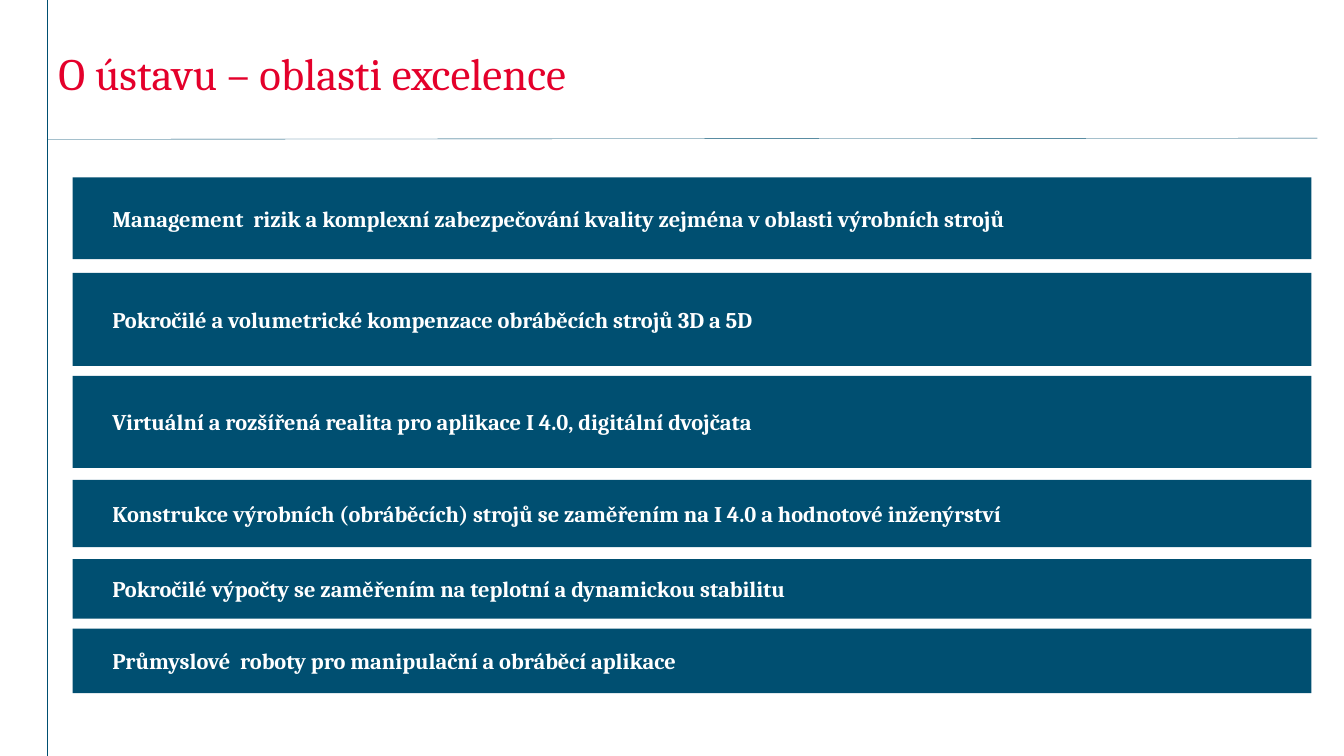
from dataclasses import dataclass

from lxml import etree
from pptx import Presentation
from pptx.dml.color import RGBColor
from pptx.enum.shapes import MSO_CONNECTOR, MSO_SHAPE
from pptx.enum.text import MSO_ANCHOR, PP_ALIGN
from pptx.oxml.ns import qn
from pptx.util import Cm, Pt

RECTANGLE = MSO_SHAPE.RECTANGLE
STRAIGHT = MSO_CONNECTOR.STRAIGHT
MIDDLE = MSO_ANCHOR.MIDDLE
LEFT = PP_ALIGN.LEFT

FONT = "Cambria"
BLUE, RED, WHITE = "004F71", "E4002B", "FFFFFF"
TITLE_ONLY = 5
SLIDE_WIDTH, SLIDE_HEIGHT = 33.87, 19.05
BAR_LEFT, BAR_WIDTH = 1.83, 31.22


@dataclass(frozen=True)
class Area:
    """An area of excellence; top and height in centimetres."""
    text: str
    top: float
    height: float


@dataclass(frozen=True)
class Rule:
    """A thin line; ends in centimetres."""
    x1: float
    y1: float
    x2: float
    y2: float


AREAS = [
    Area("Management  rizik a komplexní zabezpečování kvality zejména v oblasti výrobních strojů", 4.47, 2.06),
    Area("Pokročilé a volumetrické kompenzace obráběcích strojů 3D a 5D", 6.88, 2.34),
    Area("Virtuální a rozšířená realita pro aplikace I 4.0, digitální dvojčata", 9.47, 2.32),
    Area("Konstrukce výrobních (obráběcích) strojů se zaměřením na I 4.0 a hodnotové inženýrství", 12.09, 1.7),
    Area("Pokročilé výpočty se zaměřením na teplotní a dynamickou stabilitu", 14.09, 1.5),
    Area("Průmyslové  roboty pro manipulační a obráběcí aplikace", 15.84, 1.63),
]

RULES = [
    Rule(1.19, SLIDE_HEIGHT, 1.19, 0),
    Rule(1.19, 3.51, 33.2, 3.48),
]


def color(code: str) -> RGBColor:
    return RGBColor.from_string(code)


def write(shape, text: str, *, size: float, ink: str, bold: bool = False,
          inset: float = 0.25, spacing: float = 1.0) -> None:
    frame = shape.text_frame
    frame.word_wrap = True
    frame.vertical_anchor = MIDDLE
    frame.margin_left = frame.margin_right = Cm(inset)
    frame.margin_top = frame.margin_bottom = 0
    paragraph = frame.paragraphs[0]
    paragraph.alignment = LEFT
    paragraph.line_spacing = spacing
    run = paragraph.add_run()
    run.text = text
    run.font.name = FONT
    run.font.size = Pt(size)
    run.font.bold = bold
    run.font.color.rgb = color(ink)


def draw_rule(slide, rule: Rule) -> None:
    line = slide.shapes.add_connector(
        STRAIGHT, Cm(rule.x1), Cm(rule.y1), Cm(rule.x2), Cm(rule.y2))
    line.line.color.rgb = color(BLUE)
    line.line.width = Pt(0.25)
    etree.SubElement(line._element.spPr, qn("a:effectLst"))


def draw_area(slide, area: Area) -> None:
    bar = slide.shapes.add_shape(
        RECTANGLE, Cm(BAR_LEFT), Cm(area.top), Cm(BAR_WIDTH), Cm(area.height))
    bar.shadow.inherit = False
    bar.fill.solid()
    bar.fill.fore_color.rgb = color(BLUE)
    bar.line.fill.background()
    write(bar, area.text, size=16, ink=WHITE, bold=True, inset=1)


def main() -> None:
    deck = Presentation()
    deck.slide_width, deck.slide_height = Cm(SLIDE_WIDTH), Cm(SLIDE_HEIGHT)
    slide = deck.slides.add_slide(deck.slide_layouts[TITLE_ONLY])

    # Frame lines
    for rule in RULES:
        draw_rule(slide, rule)

    # Title
    title = slide.shapes.title
    title.left, title.top = Cm(1.22), Cm(0.51)
    title.width, title.height = Cm(22.05), Cm(2.82)
    write(title, "O ústavu – oblasti excelence", size=32, ink=RED, spacing=0.9)

    # Areas of excellence
    for area in AREAS:
        draw_area(slide, area)

    deck.save("out.pptx")


if __name__ == "__main__":
    main()
